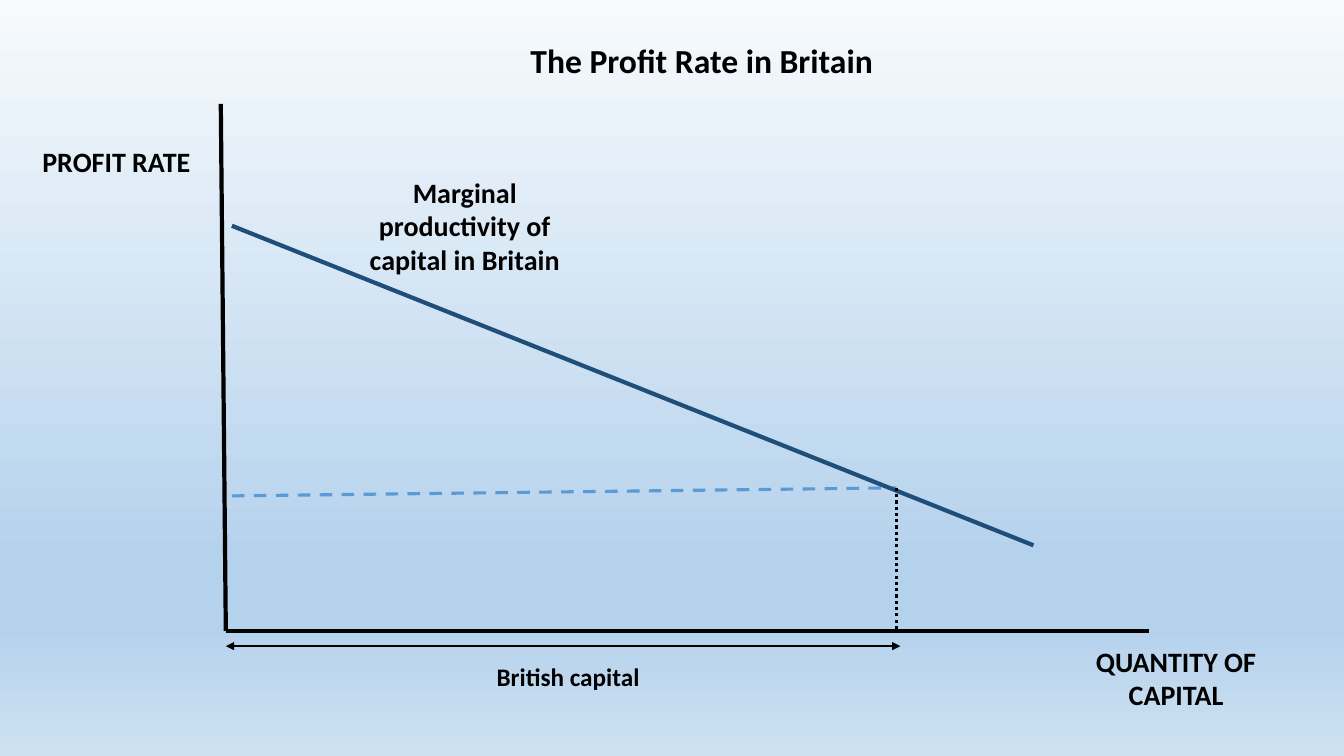
import pptx
import pptx.dml.color
import pptx.enum.dml
import pptx.enum.shapes
import pptx.enum.text
import pptx.oxml
import pptx.oxml.ns
import pptx.util
from lxml import etree

Inches = pptx.util.Inches
DASH = pptx.enum.dml.MSO_LINE

THEME = {
    "font": "Calibri",
    "ink": "000000", "curve": "1F4E79", "guide": "5B9BD5",
    "title": 24, "label": 20, "note": 18,
    "heavy": 3, "medium": 2.25, "thin": 1.5,
    "background": [(0, "F7FAFD"), (74, "B5D2EC"), (83, "B5D2EC"), (100, "CEE1F2")],
}

# Chart geometry, in inches
ORIGIN = (2.24, 6.26)
AXIS_TOP = (2.19, 1.03)
AXIS_RIGHT = (11.4, 6.26)
EQUILIBRIUM = (8.89, 4.84)
CAPITAL_FOOT = (EQUILIBRIUM[0], ORIGIN[1])
SPAN_Y = ORIGIN[1] + 0.15

# start, end, colour, width, format
LINES = [
    (AXIS_TOP, ORIGIN, "ink", "heavy", {}),
    (ORIGIN, AXIS_RIGHT, "ink", "heavy", {}),
    ((2.3, 4.92), EQUILIBRIUM, "guide", "medium", {"dash": DASH.DASH}),
    ((2.3, 2.24), (10.25, 5.41), "curve", "heavy", {}),
    (EQUILIBRIUM, CAPITAL_FOOT, "ink", "medium", {"dash": DASH.ROUND_DOT}),
    ((ORIGIN[0], SPAN_Y), (8.93, SPAN_Y), "ink", "thin", {"arrows": True}),
]

# text, (left, top, width, height), type size
LABELS = [
    ("British capital", (2.32, 6.51, 6.63, 0.71), "note"),
    ("The Profit Rate in Britain", (1.58, 0.35, 10.76, 0.5), "title"),
    ("Marginal productivity of capital in Britain", (3.48, 1.69, 2.26, 1.11), "label"),
    ("PROFIT RATE", (-0.26, 1.38, 2.83, 0.44), "label"),
    ("QUANTITY OF\vCAPITAL", (10.25, 6.34, 2.83, 0.77), "label"),
]


def rgb(name):
    return pptx.dml.color.RGBColor.from_string(THEME[name])


def add_child(parent, tag, **attributes):
    return etree.SubElement(parent, pptx.oxml.ns.qn(tag), **attributes)


def paint_background(page, stops):
    """Fill the page with a top-to-bottom gradient of any number of stops."""
    fill = page.background.fill
    fill.gradient()
    fill.gradient_angle = 270
    stop_list = page.element.find(".//" + pptx.oxml.ns.qn("a:gsLst"))
    for old_stop in list(stop_list):
        stop_list.remove(old_stop)
    for percent, colour in stops:
        stop = add_child(stop_list, "a:gs", pos=str(percent * 1000))
        add_child(stop, "a:srgbClr", val=colour)


def add_line(page, start, end, colour, width, dash=None, arrows=False):
    points = [Inches(value) for value in (*start, *end)]
    line = page.shapes.add_connector(pptx.enum.shapes.MSO_CONNECTOR.STRAIGHT, *points)
    line.line.color.rgb = rgb(colour)
    line.line.width = pptx.util.Pt(THEME[width])
    if dash is not None:
        line.line.dash_style = dash
    if arrows:
        outline = line.line.color and line.element.spPr.find(pptx.oxml.ns.qn("a:ln"))
        for tag in ("a:headEnd", "a:tailEnd"):
            add_child(outline, tag, type="triangle")
    add_child(line.element.spPr, "a:effectLst")


def add_text(page, text, place, *, size, colour="ink", bold=True):
    box = page.shapes.add_textbox(*(Inches(value) for value in place))
    box.text_frame.word_wrap = True
    para = box.text_frame.paragraphs[0]
    para.text = text
    para.alignment = pptx.enum.text.PP_ALIGN.CENTER
    for span in para.runs:
        span.font.name = THEME["font"]
        span.font.size = pptx.util.Pt(THEME[size])
        span.font.bold = bold
        span.font.color.rgb = rgb(colour)


def main():
    deck = pptx.Presentation()
    deck.slide_width, deck.slide_height = Inches(13.33), Inches(7.5)
    page = deck.slides.add_slide(deck.slide_layouts[6])
    paint_background(page, THEME["background"])
    for start, end, colour, width, style in LINES:
        add_line(page, start, end, colour, width, **style)
    for text, place, size in LABELS:
        add_text(page, text, place, size=size)
    deck.save("out.pptx")


if __name__ == "__main__":
    main()
